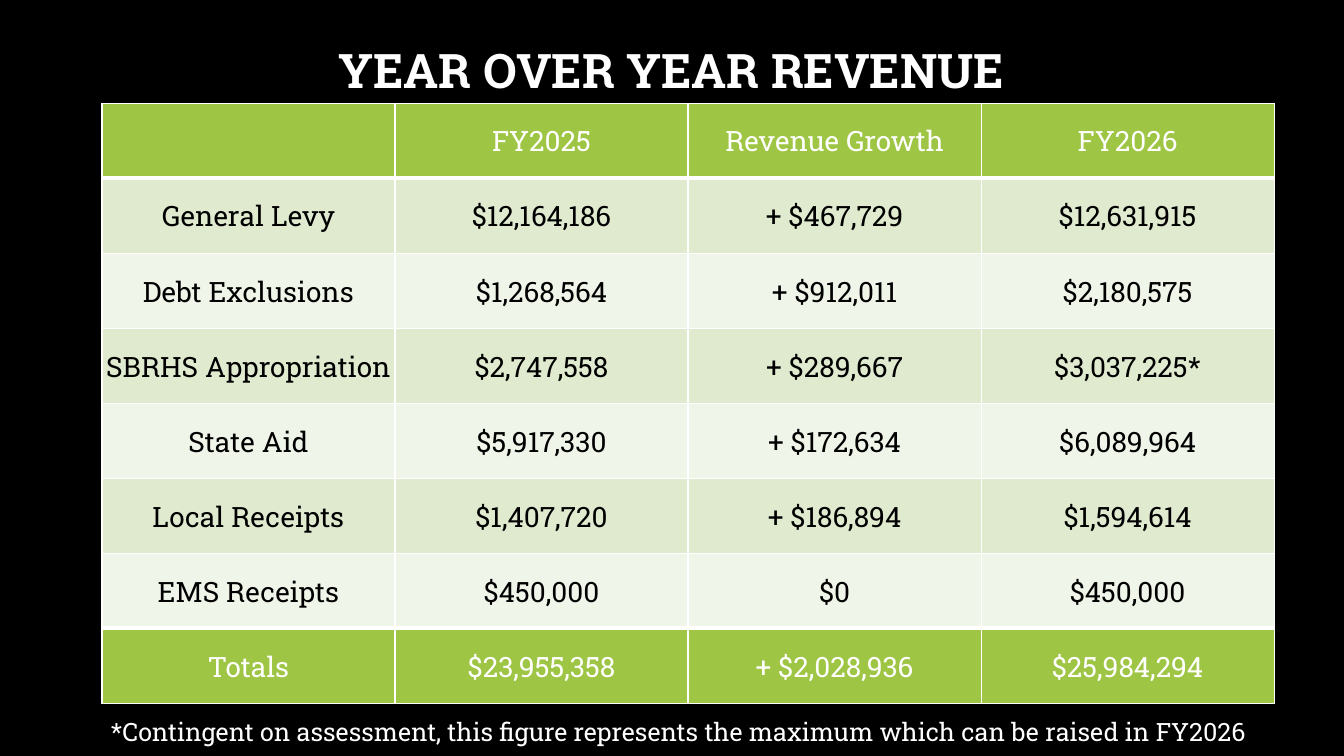
from lxml.etree import SubElement
from pptx import Presentation
from pptx.dml.color import RGBColor
from pptx.enum.text import MSO_ANCHOR, MSO_AUTO_SIZE, PP_ALIGN
from pptx.oxml.ns import qn
from pptx.util import Cm, Pt

WHITE, BLACK, GREEN = "FFFFFF", "000000", "9EC544"
BANDS = ["DFEACF", "F0F5E9"]

ROWS = [
    ["", "FY2025", "Revenue Growth", "FY2026"],
    ["General Levy", "$12,164,186", "+ $467,729", "$12,631,915"],
    ["Debt Exclusions", "$1,268,564", "+ $912,011", "$2,180,575"],
    ["SBRHS Appropriation", "$2,747,558", "+ $289,667", "$3,037,225*"],
    ["State Aid", "$5,917,330", "+ $172,634", "$6,089,964"],
    ["Local Receipts", "$1,407,720", "+ $186,894", "$1,594,614"],
    ["EMS Receipts", "$450,000", "$0", "$450,000"],
    ["Totals", "$23,955,358", "+ $2,028,936", "$25,984,294"],
]


def paint(color, code):
    color.rgb = RGBColor.from_string(code)


class Page:
    font = "Roboto Slab"

    def __init__(self, deck):
        self.slide = deck.slides.add_slide(deck.slide_layouts[5])
        back = self.slide.background.fill
        back.solid()
        paint(back.fore_color, BLACK)

    def label(self, frame, text, size, color, align, bold=False):
        frame.text = text
        para = frame.paragraphs[0]
        para.alignment = align
        for run in para.runs:
            run.font.name = self.font
            run.font.size = Pt(size)
            run.font.bold = bold
            paint(run.font.color, color)
        return para

    def title(self, text, left, top, width, height):
        shape = self.slide.shapes.title
        shape.left, shape.top = Cm(left), Cm(top)
        shape.width, shape.height = Cm(width), Cm(height)
        frame = shape.text_frame
        frame.vertical_anchor = MSO_ANCHOR.MIDDLE
        para = self.label(frame, text, 34, WHITE, PP_ALIGN.CENTER, True)
        para.line_spacing = 0.9

    def note(self, text, left, top, width, height):
        box = self.slide.shapes.add_textbox(
            Cm(left), Cm(top), Cm(width), Cm(height))
        frame = box.text_frame
        frame.word_wrap = True
        frame.auto_size = MSO_AUTO_SIZE.SHAPE_TO_FIT_TEXT
        self.label(frame, text, 18, WHITE, PP_ALIGN.LEFT)

    def edges(self, cell, top, base):
        props = cell._tc.get_or_add_tcPr()
        for side, width in zip("LRTB", (1, 1, top, base)):
            line = SubElement(props, qn(f"a:ln{side}"), w=str(Pt(width)))
            fill = SubElement(line, qn("a:solidFill"))
            SubElement(fill, qn("a:srgbClr"), val=WHITE)

    def cell(self, cell, text, fill, color, top, base):
        self.edges(cell, top, base)
        cell.fill.solid()
        paint(cell.fill.fore_color, fill)
        cell.vertical_anchor = MSO_ANCHOR.MIDDLE
        cell.margin_left = cell.margin_right = cell.margin_top = Cm(0.02)
        cell.margin_bottom = 0
        self.label(cell.text_frame, text, 20, color, PP_ALIGN.CENTER)

    def table(self, rows, left, top, width, height):
        table = self.slide.shapes.add_table(
            len(rows), len(rows[0]),
            Cm(left), Cm(top), Cm(width), Cm(height)).table
        table.first_row = table.horz_banding = False
        last = len(rows) - 1
        for r, row in enumerate(rows):
            ends = r in (0, last)
            fill = GREEN if ends else BANDS[(r - 1) % 2]
            color = WHITE if ends else BLACK
            # Thick rules set off the header and the totals
            over = 3 if r in (1, last) else 1
            under = 3 if r in (0, last - 1) else 1
            for c, text in enumerate(row):
                self.cell(table.cell(r, c), text, fill, color, over, under)


def main():
    deck = Presentation()
    deck.slide_width, deck.slide_height = Cm(33.87), Cm(19.05)
    page = Page(deck)

    # Heading
    page.title("YEAR OVER YEAR REVENUE", 2.54, 0, 28.75, 3.68)

    # Revenue by source
    page.table(ROWS, 2.57, 2.6, 29.54, 15.12)

    # Footnote
    page.note("*Contingent on assessment, this figure represents "
              "the maximum which can be raised in FY2026",
              2.54, 17.93, 30.2, 1.02)

    deck.save("out.pptx")


if __name__ == "__main__":
    main()
